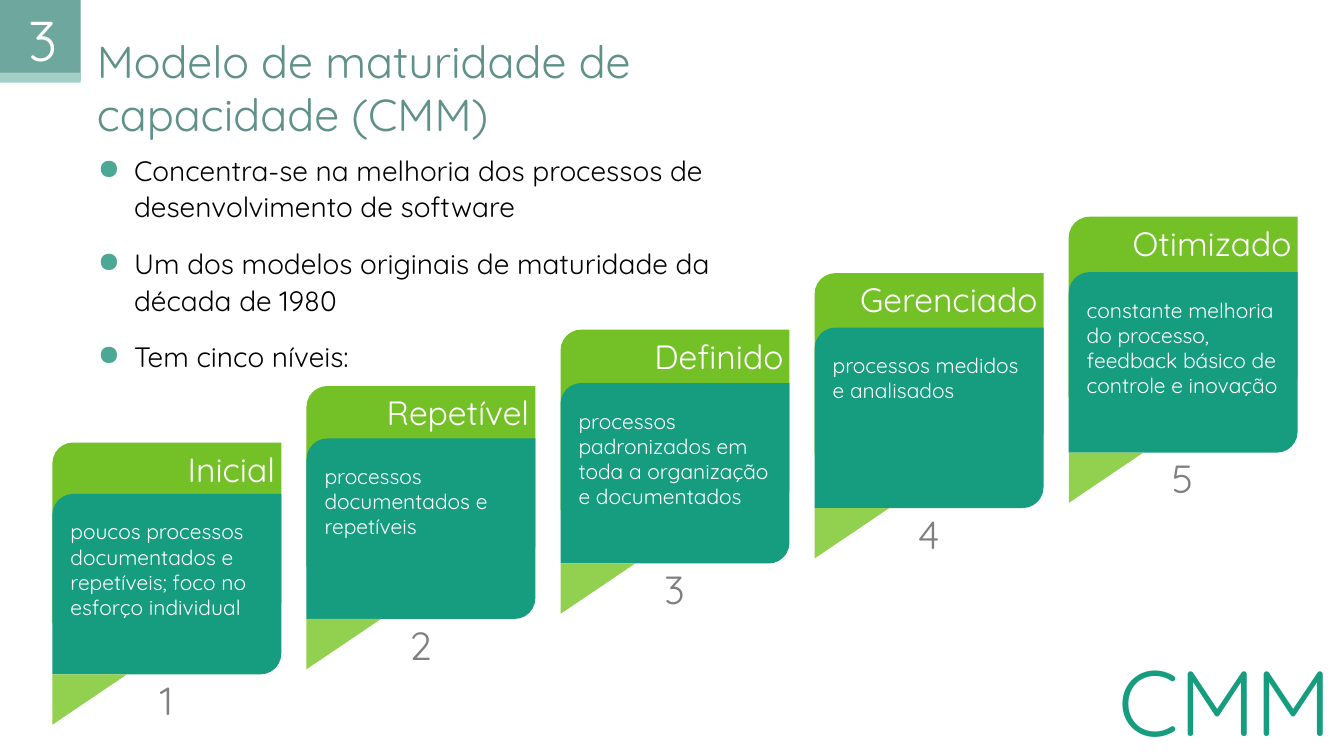
from dataclasses import dataclass, field

from lxml import etree
from pptx import Presentation
from pptx.dml.color import RGBColor
from pptx.enum.shapes import MSO_SHAPE
from pptx.enum.text import MSO_ANCHOR, MSO_AUTO_SIZE, PP_ALIGN
from pptx.oxml.ns import qn
from pptx.shapes.autoshape import Shape
from pptx.shapes.shapetree import GroupShapes, SlideShapes
from pptx.slide import Slide
from pptx.text.text import TextFrame
from pptx.util import Inches, Pt

LEFT, CENTER, RIGHT = PP_ALIGN.LEFT, PP_ALIGN.CENTER, PP_ALIGN.RIGHT
TOP, MIDDLE = MSO_ANCHOR.TOP, MSO_ANCHOR.MIDDLE
NO_AUTOSIZE = MSO_AUTO_SIZE.NONE
RECTANGLE, ELLIPSE = MSO_SHAPE.RECTANGLE, MSO_SHAPE.OVAL
CARD, TRIANGLE = MSO_SHAPE.ROUND_2_DIAG_RECTANGLE, MSO_SHAPE.RIGHT_TRIANGLE

WHITE = RGBColor(0xFF, 0xFF, 0xFF)
BLACK = RGBColor(0x00, 0x00, 0x00)
GRAY = RGBColor(0x80, 0x80, 0x80)
LABEL_GREEN = RGBColor(0x73, 0xC0, 0x27)
CARD_GREEN = RGBColor(0x16, 0x9C, 0x7F)
FOLD_GREEN = RGBColor(0x92, 0xD0, 0x50)
TITLE_GREEN = RGBColor(0x60, 0x91, 0x88)
BADGE_GREEN = RGBColor(0x6E, 0xA7, 0x9D)
BADGE_EDGE = RGBColor(0xA4, 0xCF, 0xC8)
BULLET_GREEN = RGBColor(0x4B, 0xA8, 0x95)

FONT = "Quicksand"
PLAIN_TABLE_STYLE = "{2D5ABB26-0587-4C30-8999-92F81FD0307C}"
CARD_WIDTH, CARD_HEIGHT, CARD_CORNER = 2.27, 1.79, 0.115
FIRST_LEFT, LEFT_STEP = 0.52, 2.52
FIRST_LABEL_TOP, LABEL_RISE = 4.39, 0.56
FIRST_CARD_TOP, CARD_RISE = 4.9, 0.55


@dataclass(frozen=True)
class Box:
    left: float
    top: float
    width: float
    height: float


@dataclass(frozen=True)
class TextStyle:
    size: float
    color: RGBColor
    paragraph: dict = field(default_factory=dict)
    frame: dict = field(default_factory=dict)


@dataclass(frozen=True)
class Level:
    name: str
    description: str


LABEL_STYLE = TextStyle(24, WHITE, {"alignment": RIGHT}, {
    "margin_left": Inches(0.1), "margin_top": 0,
    "margin_right": 0, "margin_bottom": Inches(0.05)})
DESCRIPTION_STYLE = TextStyle(15, WHITE, {"space_after": Pt(14)})
NUMBER_STYLE = TextStyle(28, GRAY, {"alignment": CENTER}, {"word_wrap": False})
TITLE_STYLE = TextStyle(32, TITLE_GREEN)
LIST_STYLE = TextStyle(20, BLACK, {"space_after": Pt(14), "line_spacing": 1.05})
BADGE_STYLE = TextStyle(40, WHITE, {"alignment": CENTER}, {"vertical_anchor": MIDDLE})
ACRONYM_STYLE = TextStyle(66, CARD_GREEN, {"alignment": RIGHT}, {"vertical_anchor": MIDDLE})
CELL_FORMAT = {"margin_left": Inches(0.3), "margin_top": Inches(0.2),
               "margin_right": Inches(0.3), "margin_bottom": Inches(0.2)}

TITLE = "Modelo de maturidade de capacidade (CMM)"
POINTS = [
    "Concentra-se na melhoria dos processos de desenvolvimento de software",
    "Um dos modelos originais de maturidade da década de 1980",
    "Tem cinco níveis:",
]
LEVELS = [
    Level("Inicial", "poucos processos documentados e repetíveis; foco no esforço individual"),
    Level("Repetível", "processos documentados e repetíveis"),
    Level("Definido", "processos padronizados em toda a organização e documentados"),
    Level("Gerenciado", "processos medidos e analisados"),
    Level("Otimizado", "constante melhoria do processo, feedback básico de controle e inovação"),
]


def set_attributes(target: object, values: dict) -> None:
    for name, value in values.items():
        setattr(target, name, value)


def inches(box: Box) -> list[int]:
    return [Inches(length) for length in (box.left, box.top, box.width, box.height)]


def write_lines(frame: TextFrame, lines: list[str], style: TextStyle) -> None:
    for index, line in enumerate(lines):
        paragraph = frame.add_paragraph() if index else frame.paragraphs[0]
        set_attributes(paragraph, {"alignment": LEFT} | style.paragraph)
        run = paragraph.add_run()
        run.text = line
        set_attributes(run.font, {"name": FONT, "size": Pt(style.size)})
        run.font.color.rgb = style.color


def write(shape: Shape, text: str, style: TextStyle) -> None:
    set_attributes(shape.text_frame, {"auto_size": NO_AUTOSIZE, "word_wrap": True,
                                      "vertical_anchor": TOP} | style.frame)
    write_lines(shape.text_frame, [text], style)


def add_figure(shapes: SlideShapes | GroupShapes, kind: MSO_SHAPE, box: Box,
               color: RGBColor | None) -> Shape:
    shape = shapes.add_shape(kind, *inches(box))
    shape.shadow.inherit = False
    shape.line.fill.background()
    if color is None:
        shape.fill.background()
    else:
        shape.fill.solid()
        shape.fill.fore_color.rgb = color
    return shape


def add_card(shapes: SlideShapes | GroupShapes, left: float, top: float,
             color: RGBColor) -> Shape:
    card = add_figure(shapes, CARD, Box(left, top, CARD_WIDTH, CARD_HEIGHT), color)
    card.adjustments[0] = CARD_CORNER
    return card


def add_text(shapes: SlideShapes | GroupShapes, box: Box, text: str, style: TextStyle) -> None:
    write(shapes.add_textbox(*inches(box)), text, style)


def add_level(slide: Slide, index: int, level: Level) -> None:
    left = FIRST_LEFT + index * LEFT_STEP
    label = add_card(slide.shapes, left, FIRST_LABEL_TOP - index * LABEL_RISE, LABEL_GREEN)
    write(label, level.name, LABEL_STYLE)

    top = FIRST_CARD_TOP - index * CARD_RISE
    shapes = slide.shapes.add_group_shape().shapes
    add_card(shapes, left, top, CARD_GREEN)
    fold = add_figure(shapes, TRIANGLE, Box(left + 0.12, top + 1.67, 0.5, 0.74), FOLD_GREEN)
    fold.rotation = 90
    add_text(shapes, Box(left + 0.08, top + 0.2, 2.18, 1.36),
             level.description, DESCRIPTION_STYLE)
    add_text(shapes, Box(left + 0.92, top + 1.76, 0.42, 0.57), str(index + 1), NUMBER_STYLE)


def add_bullets(frame: TextFrame) -> None:
    for paragraph in frame.paragraphs:
        properties = paragraph._p.get_or_add_pPr()
        properties.set("marL", str(Inches(0.5)))
        properties.set("indent", str(Inches(-0.36)))
        color = etree.SubElement(properties, qn("a:buClr"))
        etree.SubElement(color, qn("a:srgbClr"), val=str(BULLET_GREEN))
        etree.SubElement(properties, qn("a:buChar"), char="●")


def add_points_table(slide: Slide, box: Box, row_height: float) -> None:
    graphic_frame = slide.shapes.add_table(1, 1, *inches(box))
    table = graphic_frame.table
    set_attributes(table, {"first_row": False, "horz_banding": False})
    table._tbl.tblPr.find(qn("a:tableStyleId")).text = PLAIN_TABLE_STYLE
    table.rows[0].height = Inches(row_height)
    graphic_frame.height = Inches(box.height)
    cell = table.cell(0, 0)
    cell.fill.background()
    set_attributes(cell, CELL_FORMAT)
    write_lines(cell.text_frame, POINTS, LIST_STYLE)
    add_bullets(cell.text_frame)


def main() -> None:
    presentation = Presentation()
    set_attributes(presentation, {"slide_width": Inches(13.33), "slide_height": Inches(7.5)})
    slide = presentation.slides.add_slide(presentation.slide_layouts[5])
    title = slide.shapes.title
    title_box = inches(Box(0.86, 0.28, 7.51, 1.15))
    set_attributes(title, dict(zip(("left", "top", "width", "height"), title_box)))
    write(title, TITLE, TITLE_STYLE)
    add_points_table(slide, Box(0.53, 1.3, 7.76, 2.46), 1.79)

    for index, level in enumerate(LEVELS):
        add_level(slide, index, level)

    add_figure(slide.shapes, RECTANGLE, Box(0, 0, 0.8, 0.8), BADGE_GREEN)
    add_figure(slide.shapes, RECTANGLE, Box(0, 0.72, 0.8, 0.1), BADGE_EDGE)
    badge = add_figure(slide.shapes, ELLIPSE, Box(0.03, -0.01, 0.8, 0.8), None)
    write(badge, "3", BADGE_STYLE)
    add_text(slide.shapes, Box(9.86, 6.47, 3.45, 0.94), "CMM", ACRONYM_STYLE)
    presentation.save("out.pptx")


if __name__ == "__main__":
    main()
